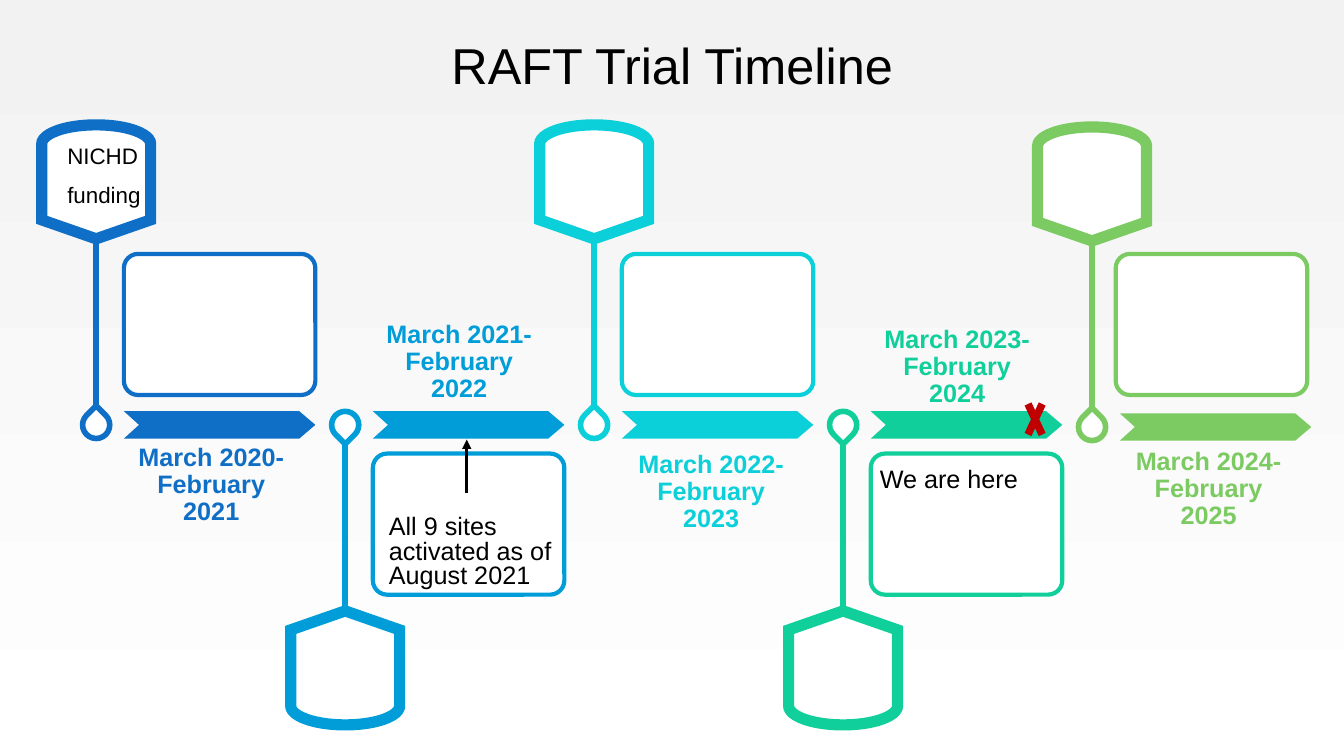
from dataclasses import dataclass

from lxml import etree
from pptx import Presentation
from pptx.dml.color import RGBColor
from pptx.enum import shapes as kinds, text as txt
from pptx.oxml import ns
from pptx.util import Pt

SHAPE = kinds.MSO_SHAPE
ALIGN = txt.PP_ALIGN


@dataclass(frozen=True)
class Theme:
    font: str = "Arial"
    black: str = "000000"
    white: str = "FFFFFF"
    grey: str = "F2F2F2"
    red: str = "C00000"
    title: float = 36
    body: float = 18
    small: float = 16


THEME = Theme()
AXIS = 303.5        # middle of the arrow band
START, STEP = 68.7, 177.84

# label, colour, label left, label top, shift down, card shift
PHASES = [
    ("March 2020-February 2021", "0F6FC6", 88.6, 314, 0, 0),
    ("March 2021-February 2022", "009DD9", 265.7, 226, 0, 0),
    ("March 2022- February 2023", "0BD0D9", 445.7, 319, 0, 0),
    ("March 2023-February 2024", "10CF9B", 621.4, 229.7, 0, 0),
    ("March 2024-February 2025", "7CCA62", 801, 316.8, 1.5, -2.9),
]


def rgb(code):
    return RGBColor.from_string(code)


def paint(shape, fill, edge=None, width=1):
    shape.shadow.inherit = False
    shape.fill.solid()
    shape.fill.fore_color.rgb = rgb(fill)
    if edge is None:
        shape.line.fill.background()
        return
    shape.line.color.rgb = rgb(edge)
    shape.line.width = Pt(width)
    join = etree.SubElement(shape.line._get_or_add_ln(), ns.qn("a:miter"))
    join.set("lim", "800000")


def add_form(slide, kind, mid, size, fill, edge, width, turn=0):
    """Preset shape placed by its centre."""
    (x, y), (w, h) = mid, size
    shape = slide.shapes.add_shape(
        kind, Pt(x - w / 2), Pt(y - h / 2), Pt(w), Pt(h))
    shape.rotation = turn
    paint(shape, fill, edge, width)
    return shape


def add_line(slide, x, top, end, color, width, arrow=False):
    line = slide.shapes.add_connector(
        kinds.MSO_CONNECTOR.STRAIGHT, Pt(x), Pt(top), Pt(x), Pt(end))
    line.line.color.rgb = rgb(color)
    line.line.width = Pt(width)
    if arrow:
        head = etree.SubElement(line.line._get_or_add_ln(), ns.qn("a:tailEnd"))
        head.set("type", "triangle")
    etree.SubElement(line._element.spPr, ns.qn("a:effectLst"))


def add_band(slide, x, y, color):
    """Notched arrow that starts at x and is centred on y."""
    half, tip, notch, wide = 9.8, 125.3, 10.8, 136.8
    pen = slide.shapes.build_freeform(Pt(x), Pt(y - half))
    points = [(tip, -half), (wide, 0), (tip, half), (0, half), (notch, 0)]
    pen.add_line_segments([(Pt(x + a), Pt(y + b)) for a, b in points])
    paint(pen.convert_to_shape(), color)


def style(frame, size, color, align, space, bold=False):
    frame.word_wrap = True
    for i, para in enumerate(frame.paragraphs):
        para.alignment = align
        para.line_spacing = space
        para.space_before = Pt(10 if i else 0)
        for run in para.runs:
            run.font.name = THEME.font
            run.font.size = Pt(size)
            run.font.bold = bold
            run.font.color.rgb = rgb(color)


def add_text(slide, words, place, size, color=THEME.black,
             align=ALIGN.LEFT, space=0.9, bold=False):
    box = slide.shapes.add_textbox(*map(Pt, place))
    box.text_frame.text = words
    style(box.text_frame, size, color, align, space, bold)


def add_phase(slide, i, color, shift, nudge):
    """Arrow, badge, drop, stem and card; odd phases hang below the axis."""
    below = i % 2
    side = 1 if below else -1
    x, y = START + i * STEP, AXIS + shift
    add_band(slide, x + 19.8, y, color)
    add_form(slide, SHAPE.FLOWCHART_DISPLAY, (x, y + side * 173.6),
             (81.4, 77.8), THEME.white, color, 8, 90 if below else 270)
    add_form(slide, SHAPE.TEAR, (x, y), (19.4, 19.4), THEME.white, color, 4,
             135 if below else 315)
    add_line(slide, x, y + side * 132.6, y + side * 13.7, color, 4)
    card = add_form(slide, SHAPE.ROUNDED_RECTANGLE,
                    (x + 88.2 + nudge, 374.4 if below else 231.8),
                    (136.8, 100.8), THEME.white, color, 3)
    card.adjustments[0] = 0.101


def add_title(slide, words):
    title = slide.shapes.title
    title.left, title.top, title.width, title.height = map(
        Pt, (66.2, 28.8, 828, 40.3))
    title.text_frame.text = words
    title.text_frame.vertical_anchor = txt.MSO_ANCHOR.MIDDLE
    title.text_frame.auto_size = txt.MSO_AUTO_SIZE.NONE
    style(title.text_frame, THEME.title, THEME.black, ALIGN.CENTER, 0.9)


def add_back(slide):
    fill = slide.background.fill
    fill.gradient()
    fill.gradient_angle = 270
    for stop, color, spot in zip(
            fill.gradient_stops, (THEME.grey, THEME.white), (0.01, 1)):
        stop.color.rgb = rgb(color)
        stop.position = spot


def main():
    deck = Presentation()
    deck.slide_width, deck.slide_height = Pt(960), Pt(540)
    slide = deck.slides.add_slide(deck.slide_layouts[5])
    add_back(slide)
    add_title(slide, "RAFT Trial Timeline")

    # Phases and their dates
    for i, (label, color, left, top, shift, nudge) in enumerate(PHASES):
        add_phase(slide, i, color, shift, nudge)
        add_text(slide, label, (left, top, 124.6, 36), THEME.body, color,
                 ALIGN.CENTER, bold=True)

    # Notes on single phases
    add_text(slide, "NICHD\nfunding", (41, 100.5, 136, 60), THEME.small)
    add_text(slide, "All 9 sites activated as of August 2021",
             (270.7, 365.5, 136, 58), THEME.body, space=0.8)
    add_text(slide, "We are here", (609.8, 331.5, 136, 24), THEME.body,
             align=ALIGN.CENTER, space=0.8)

    # Markers
    add_form(slide, SHAPE.MATH_MULTIPLY, (739.4, 299.5), (18.7, 40.3),
             THEME.red, THEME.red, 1)
    add_line(slide, 333.4, 352, 314, THEME.black, 2.25, arrow=True)
    deck.save("out.pptx")


if __name__ == "__main__":
    main()
